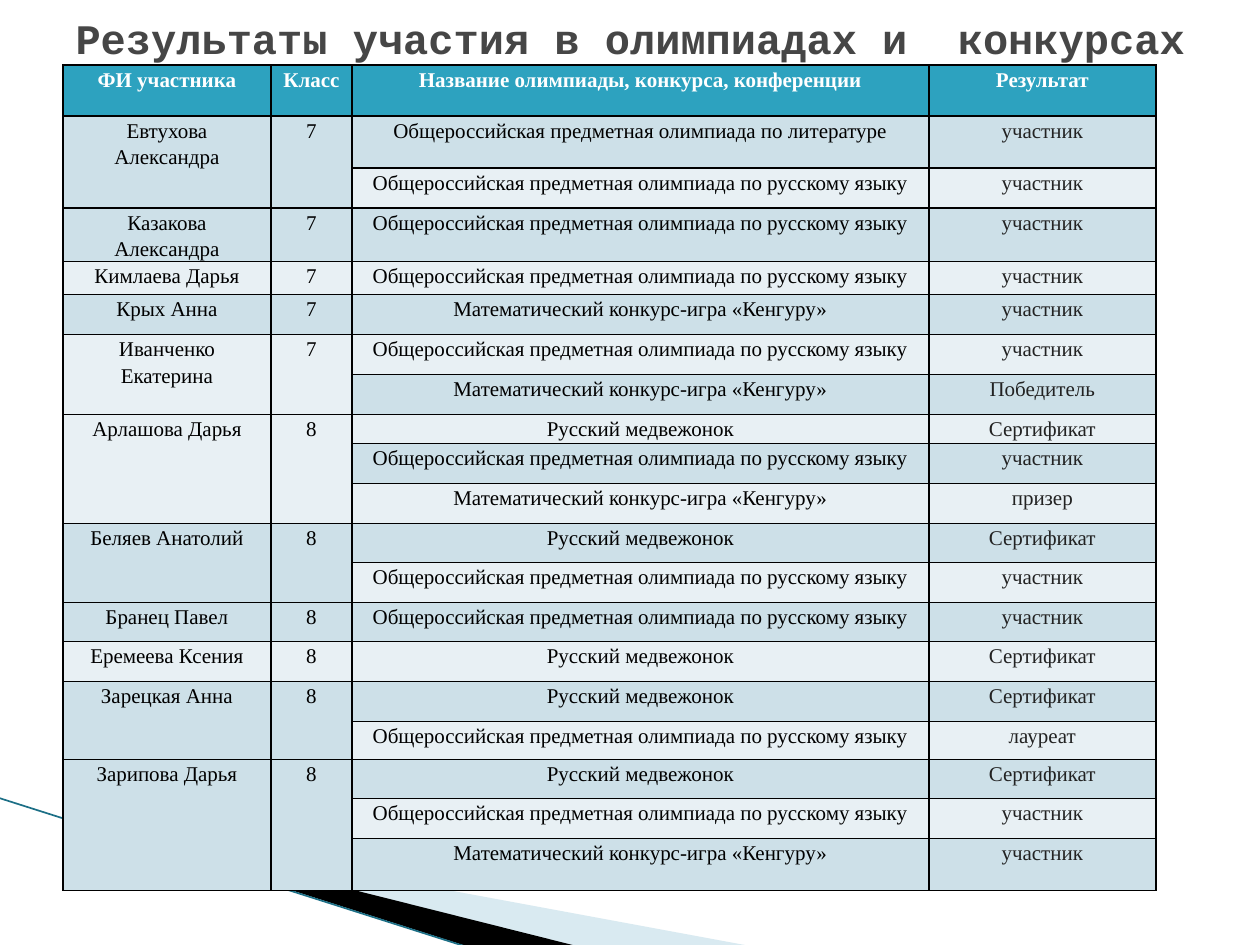
from lxml.etree import SubElement
from pptx import Presentation
from pptx.dml.color import RGBColor
from pptx.enum.shapes import MSO_CONNECTOR
from pptx.enum.text import MSO_ANCHOR, PP_ALIGN
from pptx.oxml.ns import qn
from pptx.util import Pt

PX = 914400 // 126
COLORS = {
    "header": "2DA2BF", "dark_band": "CDE0E8", "light_band": "E8F0F4",
    "white": "FFFFFF", "black": "000000", "result": "222222",
    "title": "464646", "pale_wedge": "A0CBDC", "edge": "1C6F86",
}

TITLE = "Результаты участия в олимпиадах и  конкурсах"
HEADERS = ["ФИ участника", "Класс", "Название олимпиады, конкурса, конференции", "Результат"]
LITERATURE = "Общероссийская предметная олимпиада по литературе"
RUSSIAN = "Общероссийская предметная олимпиада по русскому языку"
KANGAROO = "Математический конкурс-игра «Кенгуру»"
BEAR = "Русский медвежонок"
STUDENTS = [
    ("Евтухова Александра", 7, [(LITERATURE, "участник"), (RUSSIAN, "участник")]),
    ("Казакова Александра", 7, [(RUSSIAN, "участник")]),
    ("Кимлаева Дарья", 7, [(RUSSIAN, "участник")]),
    ("Крых Анна", 7, [(KANGAROO, "участник")]),
    ("Иванченко Екатерина", 7, [(RUSSIAN, "участник"), (KANGAROO, "Победитель")]),
    ("Арлашова Дарья", 8, [(BEAR, "Сертификат"), (RUSSIAN, "участник"), (KANGAROO, "призер")]),
    ("Беляев Анатолий", 8, [(BEAR, "Сертификат"), (RUSSIAN, "участник")]),
    ("Бранец Павел", 8, [(RUSSIAN, "участник")]),
    ("Еремеева Ксения", 8, [(BEAR, "Сертификат")]),
    ("Зарецкая Анна", 8, [(BEAR, "Сертификат"), (RUSSIAN, "лауреат")]),
    ("Зарипова Дарья", 8, [(BEAR, "Сертификат"), (RUSSIAN, "участник"), (KANGAROO, "участник")]),
]

TABLE_LEFT, TABLE_TOP = 63, 65
COLUMN_WIDTHS = [208, 81, 577, 227]
ROW_HEIGHTS = [51, 52, 40, 53, 33, 40, 40, 40, 29, 40,
               40, 39, 40, 39, 40, 40, 38, 39, 40, 52]
# colour, opacity in percent, frame (left, top, width, height), outline
WEDGES = [
    ("pale_wedge", 40, (98, 689, 524, 199), [(69, 820), (750, 946), (575, 946), (69, 819)]),
    ("black", 100, (-8, 798, 524, 116), [(67, 818), (576, 946), (469, 947), (68, 819)]),
]
EDGE_LINE = (-1, 798, 467, 947)


def color(name):
    return RGBColor.from_string(COLORS[name])


def set_all(target, values):
    for name, value in values.items():
        setattr(target, name, value)


def style_text(paragraph, font_name, size, color_name, bold):
    paragraph.alignment = PP_ALIGN.CENTER
    set_all(paragraph.font, {"name": font_name, "size": Pt(size), "bold": bold})
    paragraph.font.color.rgb = color(color_name)


def add_borders(cell):
    properties = cell._tc.get_or_add_tcPr()
    for side in ("lnL", "lnR", "lnT", "lnB"):
        line = SubElement(properties, qn(f"a:{side}"), w=str(Pt(1)))
        fill = SubElement(line, qn("a:solidFill"))
        SubElement(fill, qn("a:srgbClr"), val=COLORS["black"])


def write_cell(cell, text, color_name, bold):
    set_all(cell, {"margin_left": 10 * PX, "margin_right": 10 * PX,
                   "margin_top": 0, "margin_bottom": 0, "text": text})
    paragraph = cell.text_frame.paragraphs[0]
    paragraph.line_spacing = 1.15
    style_text(paragraph, "Times New Roman", 12, color_name, bold)


def set_frame(shape, frame):
    """Give a freeform a frame that its outline may overrun, leaving the outline in place."""
    left, top, width, height = (value * PX for value in frame)
    shift_x, shift_y = shape.left - left, shape.top - top
    outline = next(shape._element.iter(qn("a:path")))
    outline.set("w", str(width))
    outline.set("h", str(height))
    for point in outline.iter(qn("a:pt")):
        point.set("x", str(int(point.get("x")) + shift_x))
        point.set("y", str(int(point.get("y")) + shift_y))
    set_all(shape, {"left": left, "top": top, "width": width, "height": height})


def add_decoration(slide):
    for color_name, opacity, frame, points in WEDGES:
        builder = slide.shapes.build_freeform(*points[0], scale=PX)
        builder.add_line_segments(points[1:], close=True)
        wedge = builder.convert_to_shape()
        # the outline is stored in px, so bring it to EMU before shifting it
        for point in wedge._element.iter(qn("a:pt")):
            for axis in ("x", "y"):
                point.set(axis, str(int(point.get(axis)) * PX))
        set_frame(wedge, frame)
        wedge.shadow.inherit = False
        wedge.line.fill.background()
        wedge.fill.solid()
        wedge.fill.fore_color.rgb = color(color_name)
        if opacity < 100:
            fill_color = wedge._element.spPr.find(qn("a:solidFill"))[0]
            SubElement(fill_color, qn("a:alpha"), val=str(opacity * 1000))
    edge = slide.shapes.add_connector(MSO_CONNECTOR.STRAIGHT, *(v * PX for v in EDGE_LINE))
    edge.line.color.rgb = color("edge")
    edge.line.width = Pt(0.95)
    SubElement(edge._element.spPr, qn("a:effectLst"))


def add_results_table(slide):
    table = slide.shapes.add_table(
        len(ROW_HEIGHTS), len(COLUMN_WIDTHS), TABLE_LEFT * PX, TABLE_TOP * PX,
        sum(COLUMN_WIDTHS) * PX, sum(ROW_HEIGHTS) * PX).table
    for column, width in zip(table.columns, COLUMN_WIDTHS):
        column.width = width * PX
    for index, (row, height) in enumerate(zip(table.rows, ROW_HEIGHTS)):
        row.height = height * PX
        band = "dark_band" if index % 2 else "light_band"
        for cell in row.cells:
            add_borders(cell)
            cell.fill.solid()
            cell.fill.fore_color.rgb = color(band if index else "header")

    for column, header in enumerate(HEADERS):
        write_cell(table.cell(0, column), header, "white", True)
    first = 1
    for name, grade, entries in STUDENTS:
        last = first + len(entries) - 1
        for column, text in enumerate((name, str(grade))):
            if last > first:
                table.cell(first, column).merge(table.cell(last, column))
            write_cell(table.cell(first, column), text, "black", False)
        for row, (contest, result) in enumerate(entries, first):
            write_cell(table.cell(row, 2), contest, "black", False)
            write_cell(table.cell(row, 3), result, "result", False)
        first = last + 1


def format_title(slide):
    title = slide.shapes.title
    set_all(title, {"left": 63 * PX, "top": 0, "width": 1134 * PX, "height": 76 * PX})
    frame = title.text_frame
    set_all(frame, {"text": TITLE, "word_wrap": True, "vertical_anchor": MSO_ANCHOR.MIDDLE,
                    "margin_left": 0, "margin_right": 0})
    style_text(frame.paragraphs[0], "Courier New", 24, "title", True)
    slide.shapes._spTree.append(title._element)  # in front of the table


def main():
    presentation = Presentation()
    set_all(presentation, {"slide_width": 1260 * PX, "slide_height": 945 * PX})
    slide = presentation.slides.add_slide(presentation.slide_layouts[5])
    add_decoration(slide)
    add_results_table(slide)
    format_title(slide)
    presentation.save("out.pptx")


if __name__ == "__main__":
    main()
